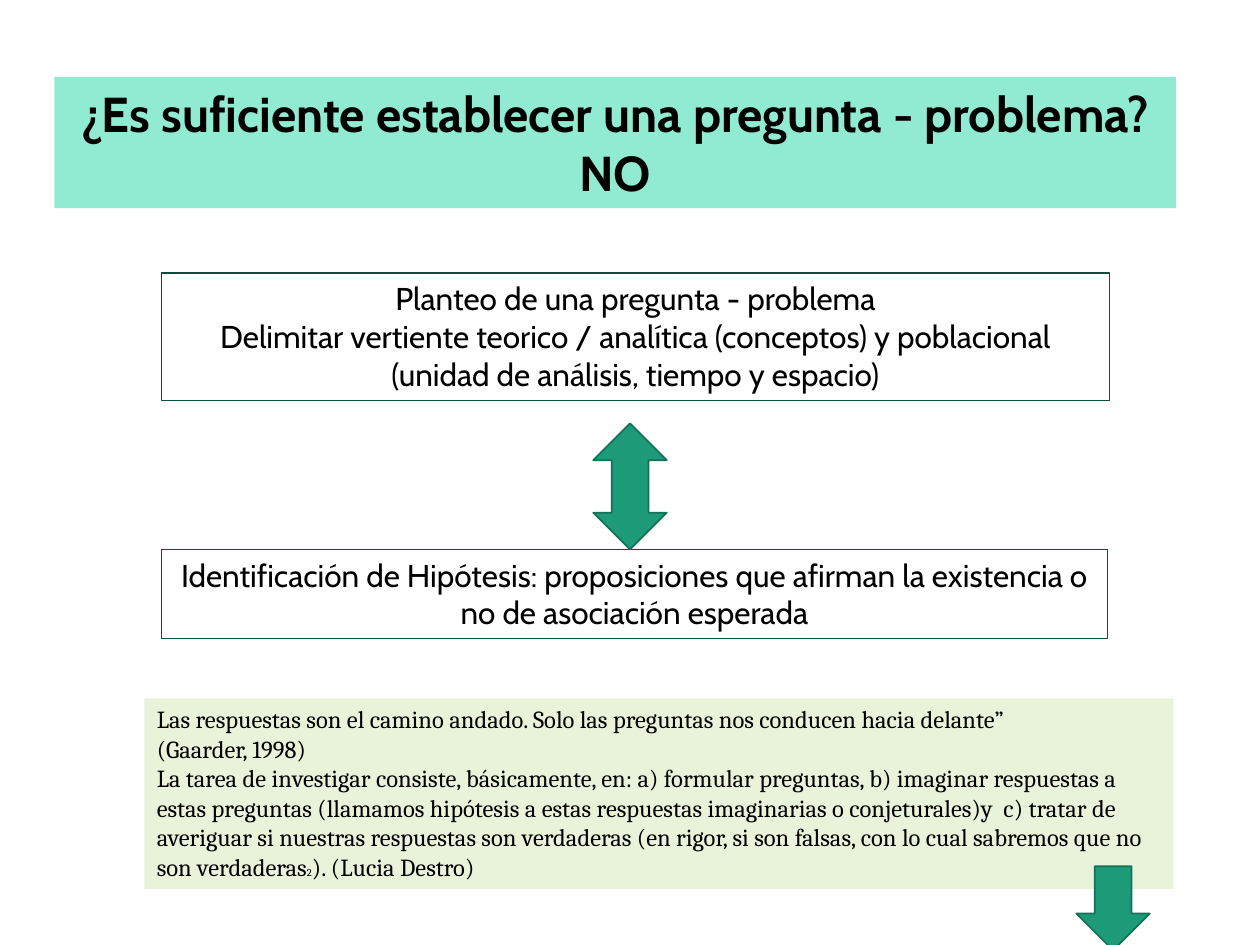
import pptx
import pptx.util
from pptx.dml.color import RGBColor
from pptx.enum.shapes import MSO_SHAPE
from pptx.enum.text import MSO_ANCHOR, MSO_AUTO_SIZE, PP_ALIGN

Pt = pptx.util.Pt
COLORS = {
    "text": "000000",
    "title": "91EAD2",
    "quote": "E8F3DA",
    "box_line": "0E4D3C",
    "arrow": "1D9A78",
    "arrow_line": "157259",
}


def color(name):
    return RGBColor.from_string(COLORS[name])


def write(sp, paragraphs, font, size, align, bold=False, anchor=MSO_ANCHOR.TOP):
    """Fill a shape with paragraphs, each a list of (text, size or None) runs."""
    tf = sp.text_frame
    tf.word_wrap = True
    tf.auto_size = MSO_AUTO_SIZE.NONE
    tf.vertical_anchor = anchor
    tf.margin_left = tf.margin_right = Pt(7.2)
    tf.margin_top = tf.margin_bottom = Pt(3.6)
    for i, runs in enumerate(paragraphs):
        p = tf.add_paragraph() if i else tf.paragraphs[0]
        p.alignment = align
        p.font.name, p.font.size, p.font.bold = font, Pt(size), bold
        p.font.color.rgb = color("text")
        for text, run_size in runs:
            r = p.add_run()
            r.text = text
            if run_size:
                r.font.size = Pt(run_size)


def add_title(s, box, text):
    sp = s.shapes.title
    sp.left, sp.top, sp.width, sp.height = map(Pt, box)
    sp.fill.solid()
    sp.fill.fore_color.rgb = color("title")
    write(sp, [[(text, None)]], "Cabin", 28, PP_ALIGN.CENTER, bold=True)


def add_step(s, box, lines):
    sp = s.shapes.add_shape(MSO_SHAPE.RECTANGLE, *map(Pt, box))
    sp.shadow.inherit = False
    sp.fill.background()
    sp.line.color.rgb = color("box_line")
    sp.line.width = Pt(0.75)
    write(sp, [[(line, None)] for line in lines], "Cabin", 18, PP_ALIGN.CENTER)


def add_quote(s, box, paragraphs):
    sp = s.shapes.add_shape(MSO_SHAPE.RECTANGLE, *map(Pt, box))
    sp.shadow.inherit = False
    sp.fill.solid()
    sp.fill.fore_color.rgb = color("quote")
    sp.line.fill.background()
    write(sp, paragraphs, "Cambria", 14, PP_ALIGN.LEFT)


def add_arrow(s, kind, box):
    """Horizontal arrow turned a quarter to stand upright."""
    sp = s.shapes.add_shape(kind, *map(Pt, box))
    sp.rotation = 90
    sp.shadow.inherit = False
    sp.fill.solid()
    sp.fill.fore_color.rgb = color("arrow")
    sp.line.color.rgb = color("arrow_line")
    sp.line.width = Pt(1)


def main():
    prs = pptx.Presentation()
    prs.slide_width, prs.slide_height = Pt(720), Pt(540)
    s = prs.slides.add_slide(prs.slide_layouts[5])

    # Title band
    add_title(s, (31, 44, 641, 75),
              "¿Es suficiente establecer una pregunta - problema? NO")

    # Question and hypothesis, joined by a double arrow
    add_step(s, (92.2, 156, 541.8, 73), [
        "Planteo de una pregunta - problema",
        "Delimitar vertiente teorico / analítica (conceptos) y poblacional "
        "(unidad de análisis, tiempo y espacio)",
    ])
    add_step(s, (92.2, 314, 540.6, 51), [
        "Identificación de Hipótesis: proposiciones que afirman la existencia o "
        "no de asociación esperada",
    ])
    add_arrow(s, MSO_SHAPE.LEFT_RIGHT_ARROW, (324, 257, 72, 42))

    # Quotations
    add_quote(s, (82.5, 399, 588, 109), [
        [("Las respuestas son el camino andado. Solo las preguntas nos conducen "
          "hacia delante”", None)],
        [("(Gaarder, 1998)", None)],
        [("La tarea de investigar consiste, básicamente, en: a) formular preguntas, "
          "b) imaginar respuestas a estas preguntas (llamamos hipótesis a estas "
          "respuestas imaginarias o conjeturales)y  c) tratar de averiguar si "
          "nuestras respuestas son verdaderas (en rigor, si son falsas, con lo cual "
          "sabremos que no son verdaderas", None),
         ("2", 6),
         ("). (Lucia Destro)", None)],
    ])

    # Arrow leading on to the next slide
    add_arrow(s, MSO_SHAPE.RIGHT_ARROW, (612, 498, 48, 42))

    prs.save("out.pptx")


if __name__ == "__main__":
    main()
